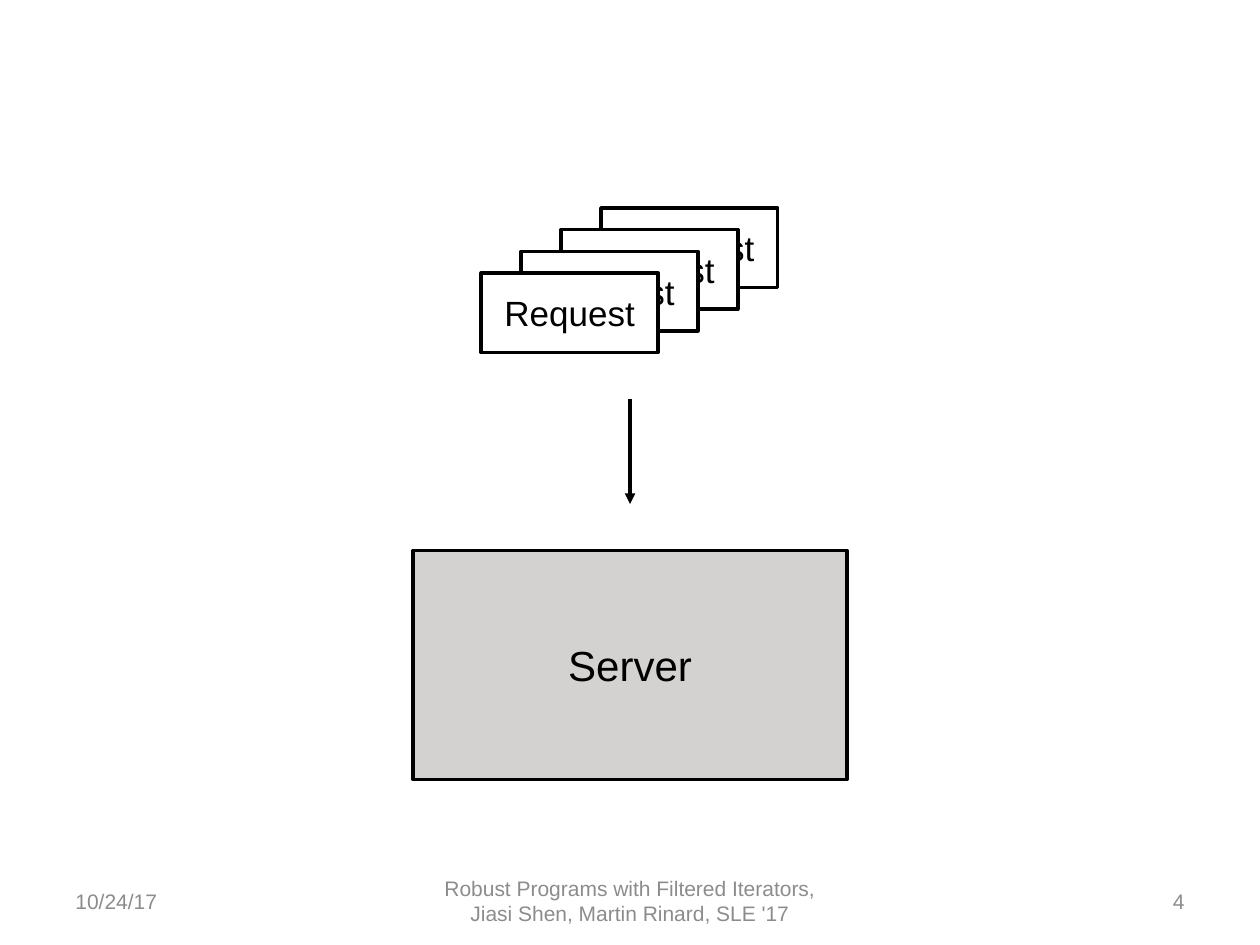
from pptx import Presentation
from pptx.dml.color import RGBColor
from pptx.enum.shapes import MSO_CONNECTOR, MSO_SHAPE
from pptx.enum.text import MSO_ANCHOR, PP_ALIGN
from pptx.oxml.ns import qn
from pptx.util import Pt
from lxml.etree import SubElement


def color(value):
    return RGBColor.from_string(value)


def write(shape, text, size, ink, align):
    frame = shape.text_frame
    frame.word_wrap = True
    frame.vertical_anchor = MSO_ANCHOR.MIDDLE
    frame.text = text
    para = frame.paragraphs[0]
    para.alignment = align
    span = para.runs[0]
    span.font.name = "Arial"
    span.font.size = Pt(size)
    span.font.color.rgb = color(ink)


deck = Presentation()
deck.slide_width = Pt(720)
deck.slide_height = Pt(540)
page = deck.slides.add_slide(deck.slide_layouts[6])

boxes = [("Request", 343.4 - 22.8 * step, 118.8 + 12.4 * step, 101, 45.5, "FFFFFF", 20)
         for step in range(4)]
boxes.append(("Server", 236, 314.5, 248, 131, "D4D2D0", 24))
for text, left, top, width, height, fill, size in boxes:
    box = page.shapes.add_shape(MSO_SHAPE.RECTANGLE, Pt(left), Pt(top), Pt(width), Pt(height))
    box.shadow.inherit = False
    box.fill.solid()
    box.fill.fore_color.rgb = color(fill)
    box.line.color.rgb = color("000000")
    box.line.width = Pt(2)
    write(box, text, size, "000000", PP_ALIGN.CENTER)

arrow = page.shapes.add_connector(MSO_CONNECTOR.STRAIGHT, Pt(360), Pt(228), Pt(360), Pt(288))
arrow.line.color.rgb = color("000000")
arrow.line.width = Pt(2)
SubElement(arrow.line._get_or_add_ln(), qn("a:tailEnd"), type="triangle")
SubElement(arrow._element.spPr, qn("a:effectLst"))

footers = [
    ("10/24/17", 36, 168, PP_ALIGN.LEFT),
    ("Robust Programs with Filtered Iterators, Jiasi Shen, Martin Rinard, SLE '17",
     246, 228, PP_ALIGN.CENTER),
    ("4", 516, 168, PP_ALIGN.RIGHT),
]
for text, left, width, align in footers:
    footer = page.shapes.add_textbox(Pt(left), Pt(500.5), Pt(width), Pt(28.75))
    write(footer, text, 12, "8C8C8C", align)

deck.save("out.pptx")
